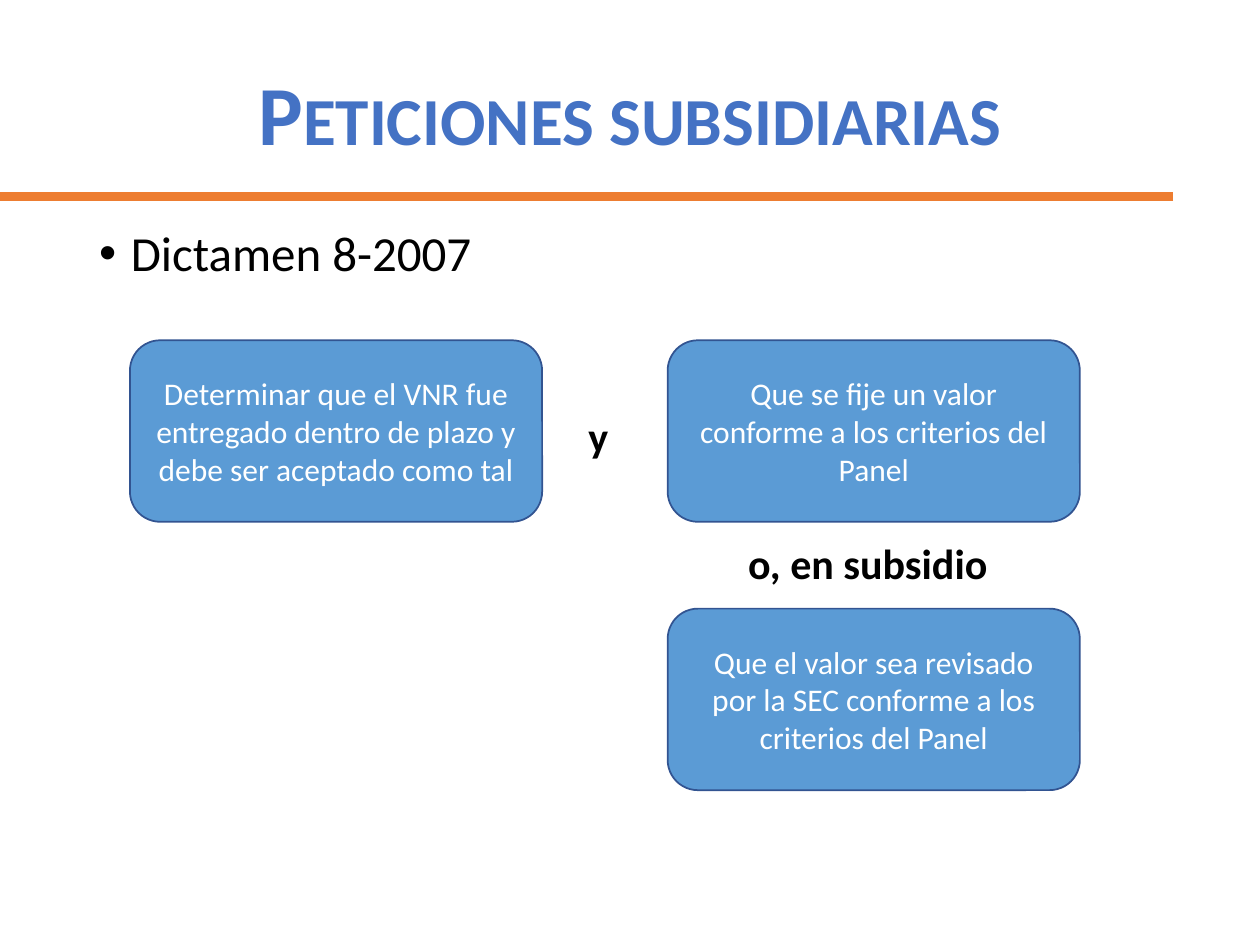
"""Build the slide on subsidiary petitions."""
import dataclasses

import lxml.etree
import pptx
import pptx.dml.color
import pptx.enum.shapes
import pptx.enum.text
import pptx.oxml.ns
import pptx.util

Cm = pptx.util.Cm
Pt = pptx.util.Pt
ALIGN = pptx.enum.text.PP_ALIGN
ANCHOR = pptx.enum.text.MSO_ANCHOR


@dataclasses.dataclass(frozen=True)
class Theme:
    """Hold the colours, font and type sizes of the slide."""

    font: str = "Calibri"
    title: str = "4472C4"
    rule: str = "ED7D31"
    fill: str = "5B9BD5"
    outline: str = "325491"
    dark: str = "000000"
    light: str = "FFFFFF"
    title_size: int = 48
    bullet_size: int = 28
    label_size: int = 24
    box_size: int = 18


THEME = Theme()


def color(value):
    """Turn a hex string into a colour."""
    return pptx.dml.color.RGBColor.from_string(value)


def write(shape, text, size, tone, bold=False, align=ALIGN.LEFT):
    """Set and format the text of a shape and return its paragraph."""
    frame = shape.text_frame
    frame.text = text
    frame.word_wrap = True
    para = frame.paragraphs[0]
    para.alignment = align
    font = para.runs[0].font
    font.name, font.size, font.bold = THEME.font, Pt(size), bold
    font.color.rgb = color(tone)
    return para


def add_title(page, text):
    """Add the centred title in small capitals."""
    box = page.shapes.add_textbox(Cm(1.75), Cm(1.02), Cm(21.9), Cm(2.72))
    para = write(box, text, THEME.title_size, THEME.title, True, ALIGN.CENTER)
    box.text_frame.vertical_anchor = ANCHOR.MIDDLE
    para.line_spacing = 0.9
    para.runs[0].font._element.set("cap", "small")


def add_bullet(page, text):
    """Add the bulleted body text."""
    box = page.shapes.add_textbox(Cm(1.75), Cm(4.5), Cm(21.9), Cm(12.65))
    para = write(box, text, THEME.bullet_size, THEME.dark)
    para.line_spacing = 0.9
    para.space_before = Pt(10)
    properties = para._p.get_or_add_pPr()
    indent = Cm(0.64)
    properties.set("marL", str(indent))
    properties.set("indent", str(-indent))
    qualify = pptx.oxml.ns.qn
    lxml.etree.SubElement(properties, qualify("a:buFont"), typeface="Arial")
    lxml.etree.SubElement(properties, qualify("a:buChar"), char="•")


def add_rule(page):
    """Add the line below the title."""
    line = page.shapes.add_connector(
        pptx.enum.shapes.MSO_CONNECTOR.STRAIGHT, Cm(23.65), Cm(3.96), Cm(0), Cm(3.96)
    )
    line.line.color.rgb = color(THEME.rule)
    line.line.width = Pt(5)
    lxml.etree.SubElement(line._element.spPr, pptx.oxml.ns.qn("a:effectLst"))


def add_petition(page, left, top, text):
    """Add a rounded box holding one petition."""
    box = page.shapes.add_shape(
        pptx.enum.shapes.MSO_SHAPE.ROUNDED_RECTANGLE, Cm(left), Cm(top), Cm(8.31), Cm(3.66)
    )
    box.shadow.inherit = False
    box.fill.solid()
    box.fill.fore_color.rgb = color(THEME.fill)
    box.line.color.rgb = color(THEME.outline)
    box.line.width = Pt(1)
    write(box, text, THEME.box_size, THEME.light, align=ALIGN.CENTER)
    box.text_frame.vertical_anchor = ANCHOR.MIDDLE


def add_link_word(page, left, top, width, text):
    """Add the bold words that join two petitions."""
    box = page.shapes.add_textbox(Cm(left), Cm(top), Cm(width), Cm(1.27))
    write(box, text, THEME.label_size, THEME.dark, bold=True)
    box.text_frame.auto_size = pptx.enum.text.MSO_AUTO_SIZE.SHAPE_TO_FIT_TEXT


def main():
    """Build and save the deck."""
    deck = pptx.Presentation()
    deck.slide_width, deck.slide_height = Cm(25.4), Cm(19.05)
    page = deck.slides.add_slide(deck.slide_layouts[6])
    add_title(page, "Peticiones subsidiarias")
    add_bullet(page, "Dictamen 8-2007")
    add_rule(page)
    left, right, upper, lower = 2.62, 13.46, 6.86, 12.27
    petitions = (
        (left, upper, "Determinar que el VNR fue entregado dentro de plazo y debe ser aceptado como tal"),
        (right, upper, "Que se fije un valor conforme a los criterios del Panel"),
        (right, lower, "Que el valor sea revisado por la SEC conforme a los criterios del Panel"),
    )
    for petition in petitions:
        add_petition(page, *petition)
    add_link_word(page, 11.61, 8.15, 1.09, "y")
    add_link_word(page, 14.83, 10.72, 8.33, "o, en subsidio")
    deck.save("out.pptx")


if __name__ == "__main__":
    main()
